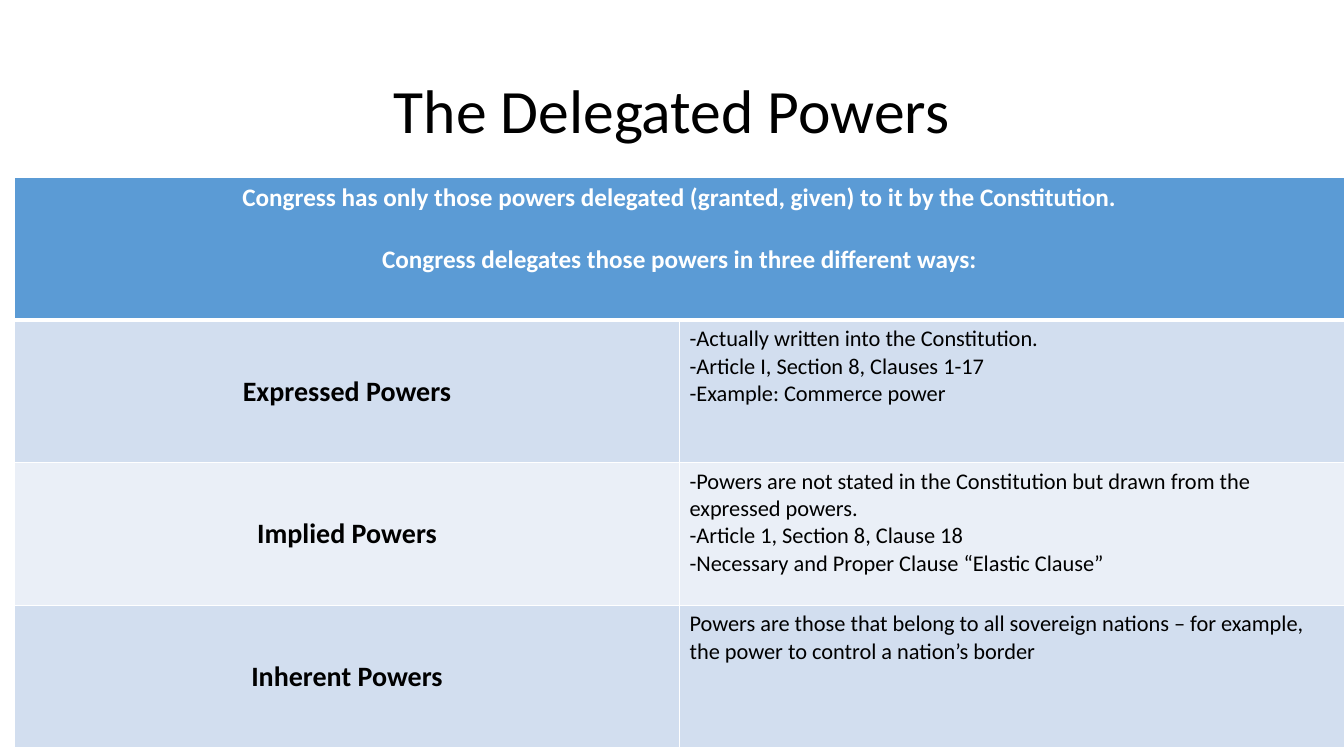
from lxml import etree
from pptx import Presentation
from pptx import util as u
from pptx.dml.color import RGBColor
from pptx.enum import text
from pptx.oxml.ns import qn

FONT = "Calibri"
COLOURS = {
    "black": "000000",
    "white": "FFFFFF",
    "header": "5B9BD5",
    "band_dark": "D2DEEF",
    "band_light": "EAEFF7",
}
CENTRE = text.PP_ALIGN.CENTER
LEFT = text.PP_ALIGN.LEFT
MIDDLE = text.MSO_ANCHOR.MIDDLE
TOP = text.MSO_ANCHOR.TOP

HEADER = [
    "Congress has only those powers delegated (granted, given) to it by the Constitution.",
    "Congress delegates those powers in three different ways:",
]
POWERS = [
    ("Expressed Powers", [
        "-Actually written into the Constitution.",
        "-Article I, Section 8, Clauses 1-17",
        "-Example: Commerce power",
    ]),
    ("Implied Powers", [
        "-Powers are not stated in the Constitution but drawn from the expressed powers.",
        "-Article 1, Section 8, Clause 18",
        "-Necessary and Proper Clause “Elastic Clause”",
    ]),
    ("Inherent Powers", [
        "Powers are those that belong to all sovereign nations – for example, "
        "the power to control a nation’s border",
    ]),
]


def colour(name):
    return RGBColor.from_string(COLOURS[name])


def write_lines(frame, lines, size, ink="black", bold=False, align=LEFT, gap=0):
    """Write one paragraph per line, with a gap in points between them."""
    for index, line in enumerate(lines):
        paragraph = frame.add_paragraph() if index else frame.paragraphs[0]
        paragraph.alignment = align
        if index and gap:
            paragraph.space_before = u.Pt(gap)
        run = paragraph.add_run()
        run.text = line
        run.font.name = FONT
        run.font.size = u.Pt(size)
        run.font.bold = bold
        run.font.color.rgb = colour(ink)


def style_cell(cell, fill, anchor=TOP, bottom=1):
    """Give a cell white borders, a fill and a vertical anchor."""
    properties = cell._tc.get_or_add_tcPr()
    for side, width in (("lnL", 1), ("lnR", 1), ("lnT", 1), ("lnB", bottom)):
        line = etree.SubElement(properties, qn(f"a:{side}"), w=str(u.Pt(width)))
        solid = etree.SubElement(line, qn("a:solidFill"))
        etree.SubElement(solid, qn("a:srgbClr"), val=COLOURS["white"])
    cell.fill.solid()
    cell.fill.fore_color.rgb = colour(fill)
    cell.vertical_anchor = anchor


def add_title(slide, title):
    box = slide.shapes.add_textbox(u.Pt(66), u.Pt(28.8), u.Pt(828), u.Pt(104.4))
    frame = box.text_frame
    frame.word_wrap = True
    frame.vertical_anchor = MIDDLE
    write_lines(frame, [title], 44, align=CENTRE)
    frame.paragraphs[0].line_spacing = 0.9


def add_powers_table(slide):
    rows = len(POWERS) + 1
    table = slide.shapes.add_table(
        rows, 2, u.Pt(10.4), u.Pt(127), u.Pt(950), u.Pt(101.8 * rows)).table
    for row in table.rows:
        row.height = u.Pt(101.8)

    # Header across both columns
    header = table.cell(0, 0)
    header.merge(table.cell(0, 1))
    for column in range(2):
        style_cell(table.cell(0, column), "header", bottom=3)
    write_lines(header.text_frame, HEADER, 18, "white", True, CENTRE, gap=22)

    # One banded row per kind of power
    for index, (name, details) in enumerate(POWERS, start=1):
        band = "band_dark" if index % 2 else "band_light"
        name_cell, detail_cell = table.cell(index, 0), table.cell(index, 1)
        style_cell(name_cell, band, MIDDLE, bottom=1)
        style_cell(detail_cell, band)
        write_lines(name_cell.text_frame, [name], 20, bold=True, align=CENTRE)
        write_lines(detail_cell.text_frame, details, 16)


def main():
    presentation = Presentation()
    presentation.slide_width = u.Pt(960)
    presentation.slide_height = u.Pt(540)
    slide = presentation.slides.add_slide(presentation.slide_layouts[6])
    add_title(slide, "The Delegated Powers")
    add_powers_table(slide)
    presentation.save("out.pptx")


if __name__ == "__main__":
    main()
